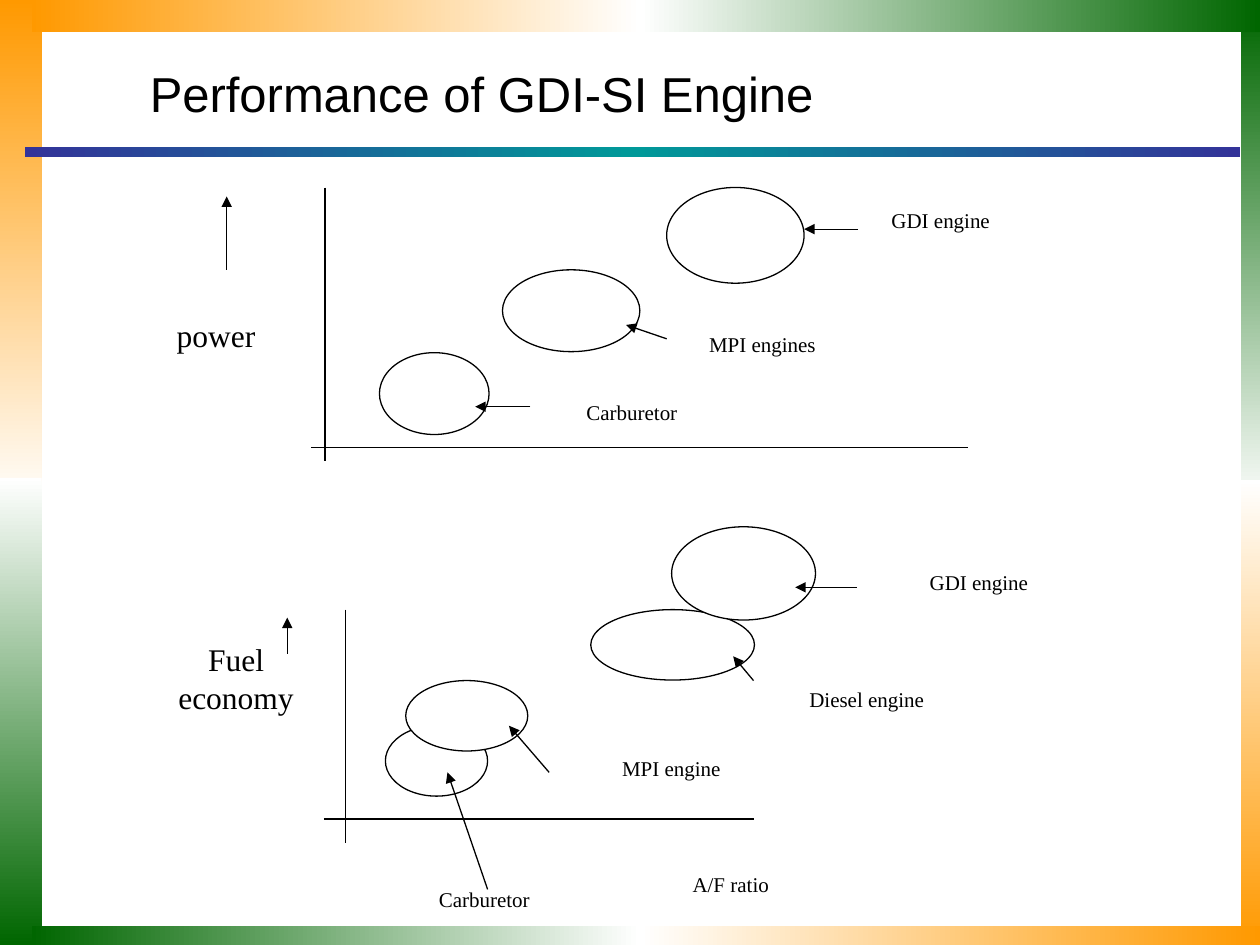
from copy import deepcopy

from lxml import etree
from pptx import Presentation
from pptx.dml.color import RGBColor
from pptx.enum.shapes import MSO_CONNECTOR, MSO_SHAPE
from pptx.enum.text import MSO_ANCHOR, PP_ALIGN
from pptx.oxml.ns import qn
from pptx.util import Cm, Pt

RECT, OVAL = MSO_SHAPE.RECTANGLE, MSO_SHAPE.OVAL
STRAIGHT = MSO_CONNECTOR.STRAIGHT
CENTER, MIDDLE = PP_ALIGN.CENTER, MSO_ANCHOR.MIDDLE

COLORS = {"ink": "000000", "white": "FFFFFF", "orange": "FF9900",
          "green": "006600", "blue": "333399", "teal": "009999"}
TITLE = "Performance of GDI-SI Engine "

# Boxes are left, top, width, height; lines are x1, y1, x2, y2; all in cm.
DOWN, RIGHT = 270, 0
FRAME = [
    ((0, 0, 0.84, 10.26), DOWN, ("orange", "white")),
    ((0, 9.63, 0.84, 9.42), DOWN, ("white", "green")),
    ((25.02, 0.1, 0.38, 10.21), DOWN, ("green", "white")),
    ((25.02, 9.68, 0.38, 9.37), DOWN, ("white", "orange")),
    ((0.64, 0, 12.27, 0.64), RIGHT, ("orange", "white")),
    ((12.9, 0, 12.5, 0.64), RIGHT, ("white", "green")),
    ((0.64, 18.67, 12.27, 0.38), RIGHT, ("green", "white")),
    ((12.9, 18.67, 12.5, 0.38), RIGHT, ("white", "orange")),
    ((0.51, 2.97, 24.49, 0.2), RIGHT, ("blue", "teal", "blue")),
]
POWER_CHART = {
    "labels": [
        ("power", 18, (2.97, 6.25, 2.77, 1.02)),
        ("Carburetor", 12, (10.95, 7.92, 3.58, 0.84)),
        ("MPI engines", 12, (13.72, 6.55, 3.3, 0.84)),
        ("GDI engine", 12, (17.58, 4.06, 2.77, 0.81)),
    ],
    "axes": [(6.55, 3.78, 6.55, 9.3), (6.27, 9.02, 19.51, 9.02)],
    "ranges": [
        (7.65, 7.11, 2.21, 1.65),
        (10.13, 5.44, 2.77, 1.65),
        (13.44, 3.78, 2.77, 1.93),
    ],
    "arrows": [
        (4.57, 5.44, 4.57, 3.96),
        (10.69, 8.2, 9.58, 8.2),
        (13.44, 6.83, 12.62, 6.55),
        (17.3, 4.62, 16.21, 4.62),
    ],
}
ECONOMY_CHART = {
    "labels": [
        ("Fuel economy", 18, (2.97, 12.78, 3.58, 2.82)),
        ("Carburetor", 12, (8.05, 17.75, 3.43, 0.86)),
        ("MPI engine", 12, (11.48, 15.11, 4.11, 0.94)),
        ("Diesel engine", 12, (15.62, 13.72, 3.71, 1.42)),
        ("GDI engine", 12, (17.68, 11.35, 4.11, 1.42)),
        ("A/F ratio ", 12, (12.73, 17.45, 4.11, 0.94)),
    ],
    "axes": [(6.96, 12.29, 6.96, 16.99), (6.53, 16.51, 15.19, 16.51)],
    "ranges": [
        (7.77, 14.63, 2.06, 1.42),
        (8.18, 13.72, 2.46, 1.42),
        (11.91, 12.29, 3.3, 1.42),
        (13.54, 10.62, 2.9, 1.88),
    ],
    "arrows": [
        (5.79, 13.18, 5.79, 12.45),
        (9.83, 17.93, 9.02, 15.57),
        (11.07, 15.57, 10.26, 14.63),
        (15.19, 13.72, 14.78, 13.23),
        (17.27, 11.84, 16.03, 11.84),
    ],
}


def rgb(name):
    return RGBColor.from_string(COLORS[name])


def cm(values):
    return [Cm(v) for v in values]


def write(tf, text, font, size):
    tf.word_wrap = True
    p = tf.paragraphs[0]
    p.alignment = CENTER
    r = p.add_run()
    r.text = text
    r.font.name, r.font.size = font, Pt(size)
    r.font.color.rgb = rgb("ink")


def add_band(shapes, box, angle, colors):
    """Add a borderless bar whose gradient runs evenly through the colours."""
    sp = shapes.add_shape(RECT, *cm(box))
    sp.shadow.inherit = False
    sp.line.fill.background()
    sp.fill.gradient()
    sp.fill.gradient_angle = angle
    stops = sp._element.spPr.find(".//" + qn("a:gsLst"))
    for _ in colors[2:]:
        stops.append(deepcopy(stops[-1]))
    for i, (stop, color) in enumerate(zip(sp.fill.gradient_stops, colors)):
        stop.position = i / (len(colors) - 1)
        stop.color.rgb = rgb(color)


def add_label(shapes, text, size, box):
    sp = shapes.add_textbox(*cm(box))
    sp.fill.solid()
    sp.fill.fore_color.rgb = rgb("white")
    write(sp.text_frame, text, "Times New Roman", size)


def add_range(shapes, box):
    sp = shapes.add_shape(OVAL, *cm(box))
    sp.shadow.inherit = False
    sp.fill.solid()
    sp.fill.fore_color.rgb = rgb("white")
    sp.line.color.rgb = rgb("ink")
    sp.line.width = Pt(0.75)


def add_line(shapes, ends, arrow=False):
    sp = shapes.add_connector(STRAIGHT, *cm(ends))
    sp.line.color.rgb = rgb("ink")
    sp.line.width = Pt(0.75)
    if arrow:
        etree.SubElement(sp.line._get_or_add_ln(), qn("a:tailEnd"), type="triangle")
    etree.SubElement(sp._element.spPr, qn("a:effectLst"))


def add_chart_sketch(shapes, chart):
    for label in chart["labels"]:
        add_label(shapes, *label)
    for axis in chart["axes"]:
        add_line(shapes, axis)
    for box in chart["ranges"]:
        add_range(shapes, box)
    for ends in chart["arrows"]:
        add_line(shapes, ends, arrow=True)


def main():
    prs = Presentation()
    prs.slide_width, prs.slide_height = Cm(25.4), Cm(19.05)
    s = prs.slides.add_slide(prs.slide_layouts[5])
    title = s.shapes.title
    title.left, title.top, title.width, title.height = cm((1.27, 1.19, 17.15, 1.35))
    title.text_frame.vertical_anchor = MIDDLE
    write(title.text_frame, TITLE, "Arial", 28)
    for band in FRAME:
        add_band(s.shapes, *band)
    for chart in (ECONOMY_CHART, POWER_CHART):
        add_chart_sketch(s.shapes, chart)
    prs.save("out.pptx")


if __name__ == "__main__":
    main()
